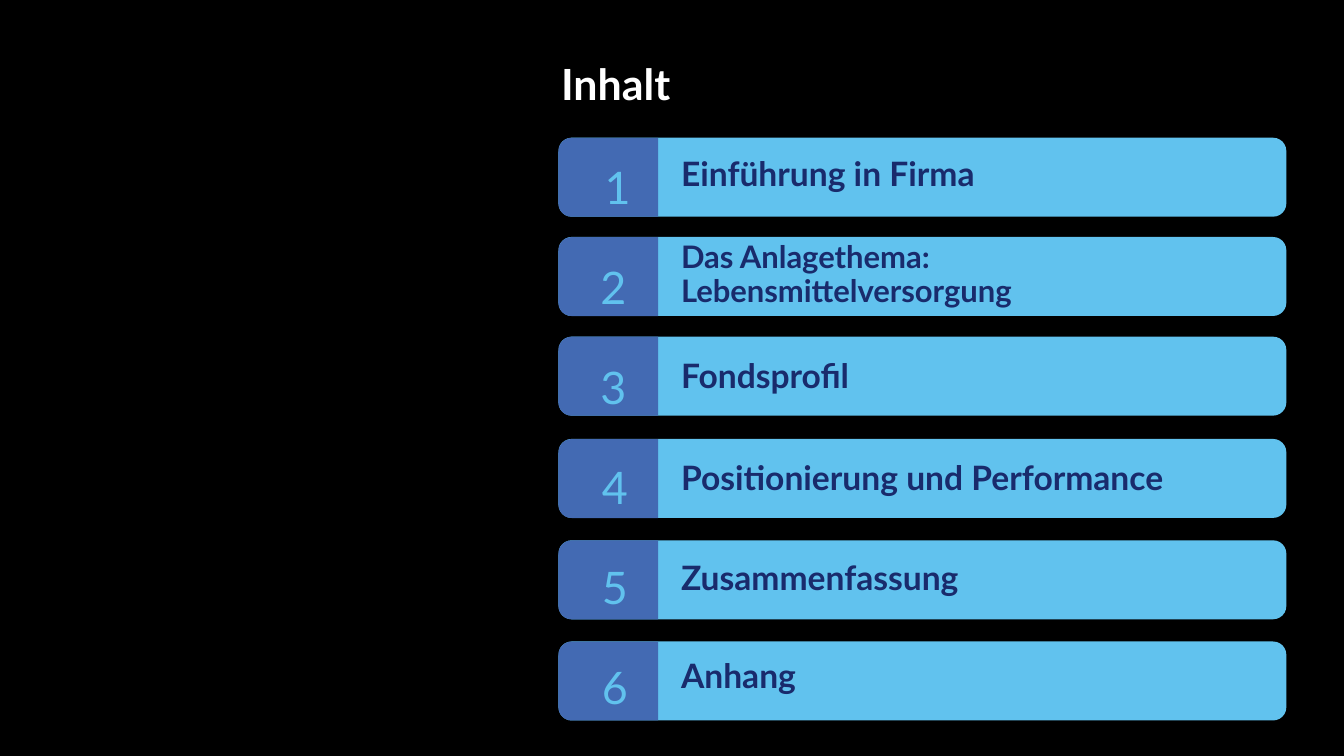
from pptx import Presentation
from pptx.dml.color import RGBColor
from pptx.enum.shapes import MSO_SHAPE as Shape
from pptx.enum.text import MSO_ANCHOR as Anchor, MSO_AUTO_SIZE as AutoSize, PP_ALIGN as Align
from pptx.util import Pt

BLACK = RGBColor(0x00, 0x00, 0x00)
WHITE = RGBColor(0xFF, 0xFF, 0xFF)
SKY = RGBColor(0x61, 0xC2, 0xEE)
BLUE = RGBColor(0x43, 0x6A, 0xB3)
NAVY = RGBColor(0x19, 0x2B, 0x6C)
FONT = "Lato"

BAR_LEFT, BAR_WIDTH, BAR_HEIGHT = 299.2, 389.9, 42.3
TAB_WIDTH = 53.4
NUMBER_TOP, NUMBER_STEP = 67.6, 53.6

CHAPTERS = [
    ("Einführung in Firma", 18, 73.8, 74.9, 316.8),
    ("Das Anlagethema: Lebensmittelversorgung", 16.6, 127, 127.4, 314.6),
    ("Fondsprofil", 18, 180.4, 182.9, 314.6),
    ("Positionierung und Performance", 18, 235.2, 237.4, 315.4),
    ("Zusammenfassung", 18, 289.5, 291, 315.4),
    ("Anhang", 18, 343.7, 343.5, 315.4),
]


def place(shape, left, top, width, height):
    shape.left, shape.top = Pt(left), Pt(top)
    shape.width, shape.height = Pt(width), Pt(height)


def write(shape, text, size, color, bold=False, spacing=None, anchor=Anchor.TOP):
    frame = shape.text_frame
    frame.text = text
    frame.word_wrap = True
    frame.vertical_anchor = anchor
    paragraph = frame.paragraphs[0]
    paragraph.alignment = Align.LEFT
    if spacing:
        paragraph.line_spacing = spacing
    font = paragraph.runs[0].font
    font.name, font.size, font.bold = FONT, Pt(size), bold
    font.color.rgb = color


def add_text(slide, box, *style, **options):
    shape = slide.shapes.add_textbox(*map(Pt, box))
    write(shape, *style, **options)
    return shape


def add_filled(group, kind, box, color):
    shape = group.shapes.add_shape(kind, *map(Pt, box))
    shape.shadow.inherit = False
    shape.fill.solid()
    shape.fill.fore_color.rgb = color
    shape.line.fill.background()
    return shape


def add_bar(slide, top):
    group = slide.shapes.add_group_shape()
    add_filled(group, Shape.ROUNDED_RECTANGLE, (BAR_LEFT, top, BAR_WIDTH, BAR_HEIGHT), SKY)
    offset = (TAB_WIDTH - BAR_HEIGHT) / 2
    tab_box = (BAR_LEFT + offset, top - offset, BAR_HEIGHT, TAB_WIDTH)
    tab = add_filled(group, Shape.ROUND_2_SAME_RECTANGLE, tab_box, BLUE)
    tab.rotation = 270


def add_number(slide, number, left):
    top = NUMBER_TOP + (number - 1) * NUMBER_STEP
    shape = add_text(slide, (left, top, 33.1, 46), str(number), 24, SKY, spacing=1.5)
    shape.text_frame.auto_size = AutoSize.SHAPE_TO_FIT_TEXT


def add_title(slide, text):
    title = slide.shapes.title
    place(title, 293.4, 27.4, 226.8, 36)
    write(title, text, 23, WHITE, bold=True)
    title.text_frame.auto_size = AutoSize.SHAPE_TO_FIT_TEXT


def main():
    presentation = Presentation()
    presentation.slide_width, presentation.slide_height = Pt(720), Pt(405)
    slide = presentation.slides.add_slide(presentation.slide_layouts[5])
    slide.background.fill.solid()
    slide.background.fill.fore_color.rgb = BLACK
    add_title(slide, "Inhalt")
    for number, (text, size, bar_top, label_top, number_left) in enumerate(CHAPTERS, 1):
        add_bar(slide, bar_top)
        add_number(slide, number, number_left)
        add_text(slide, (357.8, label_top, 316.8, 39.6), text, size, NAVY,
                 bold=True, spacing=Pt(18), anchor=Anchor.MIDDLE)
    presentation.save("out.pptx")


if __name__ == "__main__":
    main()
